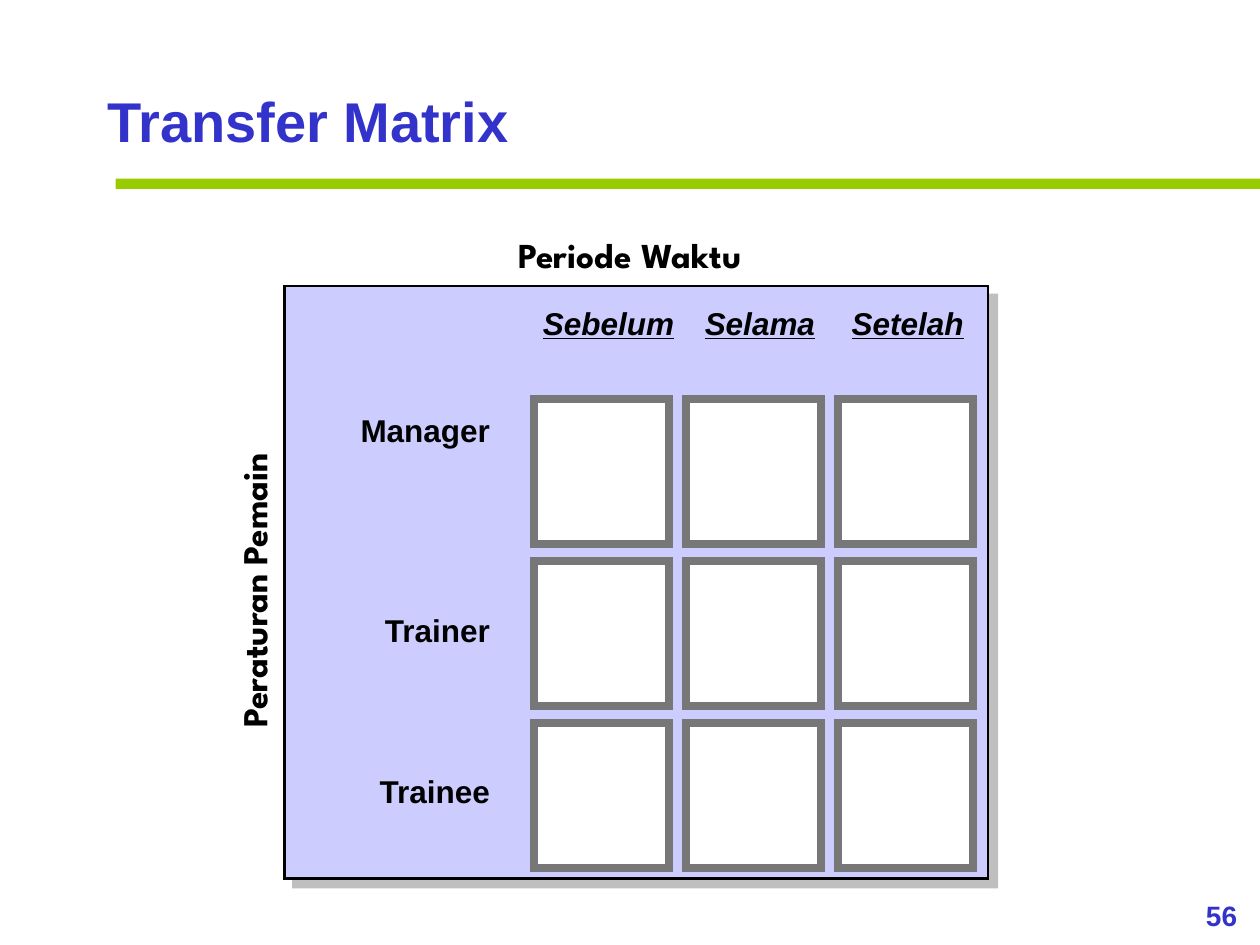
from dataclasses import dataclass

from lxml.etree import SubElement
from pptx import Presentation
from pptx.dml.color import RGBColor
from pptx.enum.shapes import MSO_SHAPE as Preset
from pptx.enum.text import MSO_ANCHOR as Anchor, MSO_AUTO_SIZE as AutoSize, PP_ALIGN as Align
from pptx.oxml.ns import qn
from pptx.util import Cm, Pt


@dataclass(frozen=True)
class Theme:
    body_font: str = "Arial"
    axis_font: str = "League Spartan"
    ink: str = "000000"
    accent: str = "3333CC"
    rule: str = "99CC00"
    panel: str = "CCCCFF"
    cell: str = "FFFFFF"
    cell_border: str = "777777"
    shadow: str = "808080"
    number_size: int = 16
    label_size: int = 18
    axis_size: int = 20
    title_size: int = 32


@dataclass(frozen=True)
class Frame:
    """Position and size in centimetres."""
    left: float
    top: float
    width: float
    height: float

    def lengths(self) -> tuple:
        return Cm(self.left), Cm(self.top), Cm(self.width), Cm(self.height)


@dataclass(frozen=True)
class Label:
    text: str
    frame: Frame
    size: int
    align: Align = Align.CENTER
    font: str = Theme.body_font
    color: str = Theme.ink
    emphasis: bool = False
    wrap: bool = True
    padded: bool = False
    rotation: int = 0
    line_spacing: float = 1.0


THEME = Theme()
LABEL_HEIGHT = 0.76
HEADER_TOP = 6.12
ROW_LABEL_RIGHT = 9.88
PERIODS = (("Sebelum", 10.85, 2.84), ("Selama", 14.1, 2.44), ("Setelah", 17.07, 2.46))
PLAYERS = (("Manager", 8.29, 2.82), ("Trainer", 12.32, 2.36), ("Trainee", 15.57, 2.46))
FIRST_CELL = Frame(10.77, 8.04, 2.72, 2.92)
COLUMN_STEP, ROW_STEP = 3.06, 3.27


def add_label(page, label: Label) -> None:
    box = page.shapes.add_textbox(*label.frame.lengths())
    box.rotation = label.rotation
    frame = box.text_frame
    frame.word_wrap = label.wrap
    frame.vertical_anchor = Anchor.TOP
    if not label.padded:
        frame.margin_left = frame.margin_right = 0
        frame.margin_top = frame.margin_bottom = 0
        frame.auto_size = AutoSize.SHAPE_TO_FIT_TEXT
    para = frame.paragraphs[0]
    para.alignment = label.align
    para.line_spacing = label.line_spacing
    span = para.add_run()
    span.text = label.text
    span.font.name = label.font
    span.font.size = Pt(label.size)
    span.font.color.rgb = RGBColor.from_string(label.color)
    span.font.bold = True
    if label.emphasis:
        span.font.italic = span.font.underline = True


def add_rectangle(shapes, frame: Frame, fill: str, line: str = "", width: float = 0):
    """Draw a filled rectangle; a given line colour adds a square-cornered border."""
    box = shapes.add_shape(Preset.RECTANGLE, *frame.lengths())
    box.shadow.inherit = False
    box.fill.solid()
    box.fill.fore_color.rgb = RGBColor.from_string(fill)
    if line:
        box.line.color.rgb = RGBColor.from_string(line)
        box.line.width = Pt(width)
        SubElement(box.element.spPr.find(qn("a:ln")), qn("a:miter"), lim="800000")
    else:
        box.line.fill.background()
    return box


def add_drop_shadow(box, color: str) -> None:
    effects = box.element.spPr.find(qn("a:effectLst"))
    shadow = SubElement(effects, qn("a:outerShdw"), dist=str(Pt(7.1)),
                        dir=str(45 * 60000), algn="ctr", rotWithShape="0")
    tint = SubElement(shadow, qn("a:srgbClr"), val=color)
    SubElement(tint, qn("a:alpha"), val="50000")


def add_matrix(page) -> None:
    panel = add_rectangle(page.shapes, Frame(5.74, 5.77, 14.18, 11.94), THEME.panel, THEME.ink, 1.5)
    add_drop_shadow(panel, THEME.shadow)
    for text, left, width in PERIODS:
        add_label(page, Label(text, Frame(left, HEADER_TOP, width, LABEL_HEIGHT),
                              THEME.label_size, emphasis=True, wrap=False))
    for text, top, width in PLAYERS:
        add_label(page, Label(text, Frame(ROW_LABEL_RIGHT - width, top, width, LABEL_HEIGHT),
                              THEME.label_size, Align.RIGHT, wrap=False))
    for column in range(len(PERIODS)):
        group = page.shapes.add_group_shape()
        for row in range(len(PLAYERS)):
            cell = Frame(FIRST_CELL.left + column * COLUMN_STEP, FIRST_CELL.top + row * ROW_STEP,
                         FIRST_CELL.width, FIRST_CELL.height)
            add_rectangle(group.shapes, cell, THEME.cell, THEME.cell_border, 4.5)


def main() -> None:
    deck = Presentation()
    deck.slide_width, deck.slide_height = Cm(25.4), Cm(19.05)
    page = deck.slides.add_slide(deck.slide_layouts[6])

    add_label(page, Label("56", Frame(23.85, 17.98, 1.55, 0.94), THEME.number_size,
                          color=THEME.accent, padded=True))
    add_rectangle(page.shapes, Frame(2.33, 3.6, 23.07, 0.21), THEME.rule)
    add_label(page, Label("Transfer Matrix", Frame(1.91, 1.48, 22.4, 1.7), THEME.title_size,
                          Align.LEFT, color=THEME.accent, padded=True, line_spacing=1.1))
    add_matrix(page)
    add_label(page, Label("Periode Waktu", Frame(5.74, 4.7, 13.92, 0.84), THEME.axis_size,
                          font=THEME.axis_font))
    add_label(page, Label("Peraturan Pemain", Frame(-0.56, 11.48, 11.33, 0.84), THEME.axis_size,
                          font=THEME.axis_font, rotation=270))
    deck.save("out.pptx")


if __name__ == "__main__":
    main()
